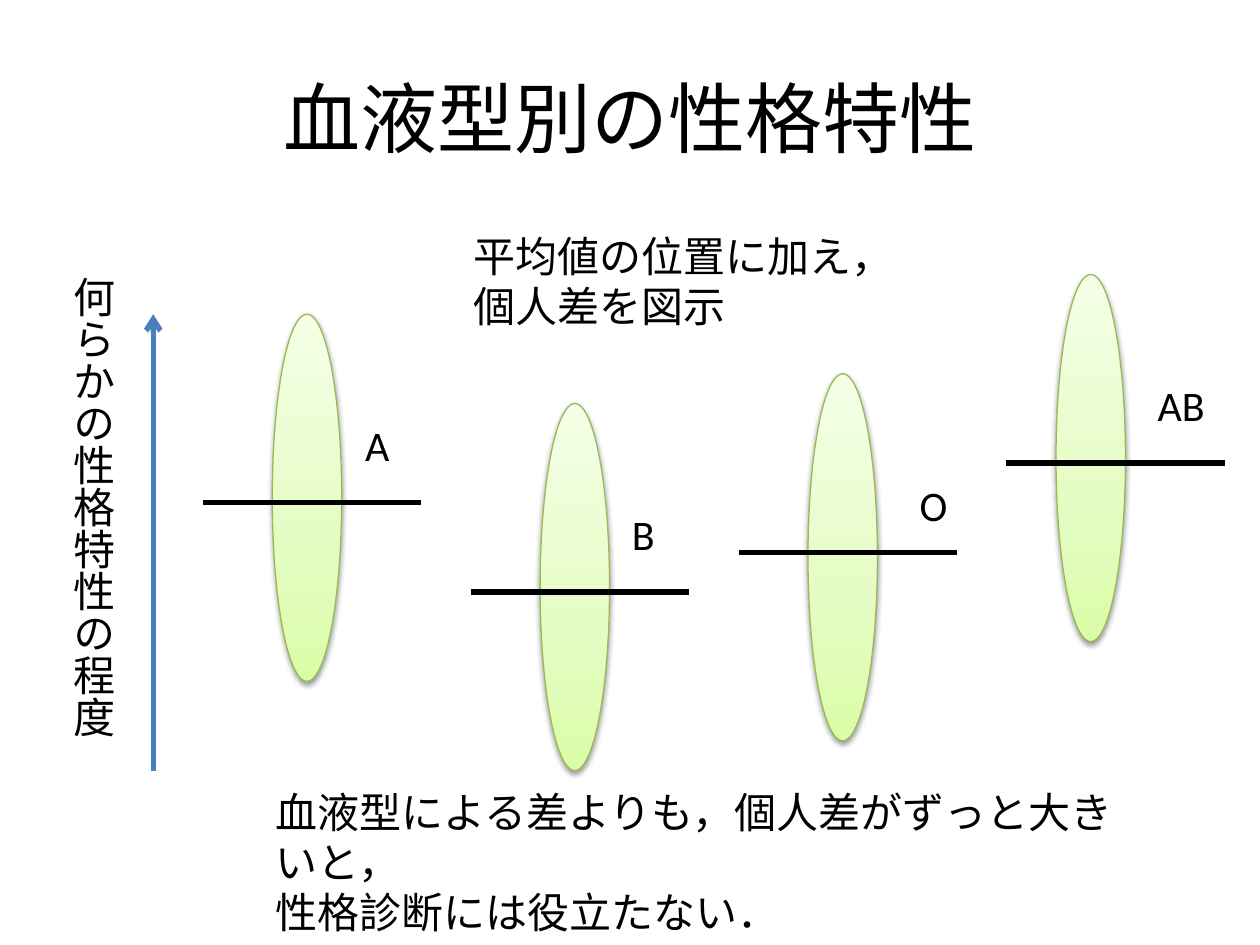
from copy import deepcopy
from dataclasses import dataclass

from lxml.etree import SubElement
from pptx import Presentation
from pptx.dml.color import RGBColor
from pptx.enum.shapes import MSO_CONNECTOR as Connector, MSO_SHAPE as Shape
from pptx.enum.text import MSO_ANCHOR as Anchor, MSO_AUTO_SIZE as AutoSize, PP_ALIGN as Align
from pptx.oxml.ns import qn
from pptx.util import Inches, Pt

SLIDE_W, SLIDE_H = 10, 7.5
CELL = 0.2 / 2.54               # grid step: 2 mm, in inches
ORIGIN_X, ORIGIN_Y = 1.61, 3.99  # left end of the first mean line
GROUP_COLS, MEAN_COLS = 27, 22
SPREAD_COLS, SPREAD_ROWS = 7, 37
LABEL_ROWS = 6.4

COLORS = {"text": "000000", "mean": "000000", "axis": "4B7EBC",
          "outline": "98B955", "shadow": "000000",
          "low": "DAFDA7", "middle": "E4FCC2", "high": "F5FFE7"}
SPREAD_STOPS = [(0, "low"), (0.35, "middle"), (1, "high")]
SHADOW = {"blurRad": "40000", "dist": "20000", "dir": "5400000", "rotWithShape": "0"}
FONT = {"name": "Calibri", "size": Pt(24)}


@dataclass
class BloodType:
    """Rows count from the first mean line, columns from the group's left."""
    name: str
    mean_row: float
    spread_row: float
    spread_col: float
    label_row: float
    label_col: float
    label_cols: float


@dataclass
class Note:
    """Box as percentages of the slide's width and height."""
    text: str
    left: float
    top: float
    width: float
    height: float
    wrap: bool = False
    vertical: bool = False


BLOOD_TYPES = [
    BloodType("A", 0, -19, 7, -9, 15.1, 5),
    BloodType("B", 9, -10, 7, 0, 15, 4.8),
    BloodType("O", 5, -13, 7, -3, 17, 5.3),
    BloodType("AB", -4, -23, 5, -13, 14, 7.4),
]
NOTES = [
    Note("何らかの性格特性の程度", 3.8, 28, 6.1, 56.93, wrap=True, vertical=True),
    Note("平均値の位置に加え，\n個人差を図示", 36.6, 23.73, 34, 12.13),
    Note("血液型による差よりも，個人差がずっと大きいと，\n性格診断には役立たない．",
         20.9, 82.53, 71.1, 12.13, wrap=True),
]


def color(key: str) -> RGBColor:
    return RGBColor.from_string(COLORS[key])


def x_at(col: float) -> int:
    return Inches(ORIGIN_X + col * CELL)


def y_at(row: float) -> int:
    return Inches(ORIGIN_Y + row * CELL)


def cells(count: float) -> int:
    return Inches(count * CELL)


def format_text(frame, **changes) -> None:
    for paragraph in frame.paragraphs:
        for run in paragraph.runs:
            for key, value in (FONT | changes).items():
                setattr(run.font, key, value)
            run.font.color.rgb = color("text")


def add_text(slide, text: str, box: tuple, wrap: bool = False, vertical: bool = False) -> None:
    frame = slide.shapes.add_textbox(*box).text_frame
    frame.text = text
    frame.word_wrap = wrap
    frame.auto_size = AutoSize.SHAPE_TO_FIT_TEXT
    if vertical:
        frame._txBody.bodyPr.set("vert", "eaVert")
    format_text(frame)


def add_line(slide, start: tuple, end: tuple, color_key: str, arrow: bool = False) -> None:
    line = slide.shapes.add_connector(
        Connector.STRAIGHT, x_at(start[0]), y_at(start[1]), x_at(end[0]), y_at(end[1]))
    line.line.color.rgb = color(color_key)
    line.line.width = Pt(3)
    if arrow:
        SubElement(line.line._get_or_add_ln(), qn("a:tailEnd"), type="arrow")
    SubElement(line._element.spPr, qn("a:effectLst"))


def add_spread(slide, col: float, row: float) -> None:
    spread = slide.shapes.add_shape(
        Shape.OVAL, x_at(col), y_at(row), cells(SPREAD_COLS), cells(SPREAD_ROWS))
    spread.line.color.rgb = color("outline")
    spread.line.width = Pt(0.75)

    # Gradient rising from the bottom, with a third stop
    spread.fill.gradient()
    spread.fill.gradient_angle = 90
    properties = spread._element.spPr
    stop_list = properties.find(".//" + qn("a:gsLst"))
    stop_list.append(deepcopy(stop_list[-1]))
    for stop, (position, key) in zip(spread.fill.gradient_stops, SPREAD_STOPS):
        stop.position = position
        stop.color.rgb = color(key)

    # Soft shadow below
    spread.shadow.inherit = False
    shadow = SubElement(properties.find(qn("a:effectLst")), qn("a:outerShdw"), **SHADOW)
    tint = SubElement(shadow, qn("a:srgbClr"), val=COLORS["shadow"])
    SubElement(tint, qn("a:alpha"), val="38000")


def main() -> None:
    deck = Presentation()
    deck.slide_width, deck.slide_height = Inches(SLIDE_W), Inches(SLIDE_H)
    slide = deck.slides.add_slide(deck.slide_layouts[5])

    # Title
    title = slide.shapes.title
    title_box = {"left": 0.05 * SLIDE_W, "top": 0.04 * SLIDE_H,
                 "width": 0.9 * SLIDE_W, "height": SLIDE_H / 6}
    for side, length in title_box.items():
        setattr(title, side, Inches(length))
    title.text_frame.text = "血液型別の性格特性"
    title.text_frame.vertical_anchor = Anchor.MIDDLE
    title.text_frame.paragraphs[0].alignment = Align.CENTER
    format_text(title.text_frame, size=Pt(44))

    # Individual spread, mean and label of each blood type
    groups = [(i * GROUP_COLS, blood) for i, blood in enumerate(BLOOD_TYPES)]
    for col, blood in reversed(groups):
        add_spread(slide, col + blood.spread_col, blood.spread_row)
    for col, blood in groups:
        add_line(slide, (col, blood.mean_row), (col + MEAN_COLS, blood.mean_row), "mean")
        add_text(slide, blood.name, (x_at(col + blood.label_col), y_at(blood.label_row),
                                     cells(blood.label_cols), cells(LABEL_ROWS)))

    # Axis for the degree of the trait
    add_line(slide, (-5, 27), (-5, -19), "axis", arrow=True)

    # Axis caption, explanation and conclusion
    for note in NOTES:
        box = (Inches(note.left / 100 * SLIDE_W), Inches(note.top / 100 * SLIDE_H),
               Inches(note.width / 100 * SLIDE_W), Inches(note.height / 100 * SLIDE_H))
        add_text(slide, note.text, box, note.wrap, note.vertical)

    deck.save("out.pptx")


if __name__ == "__main__":
    main()
